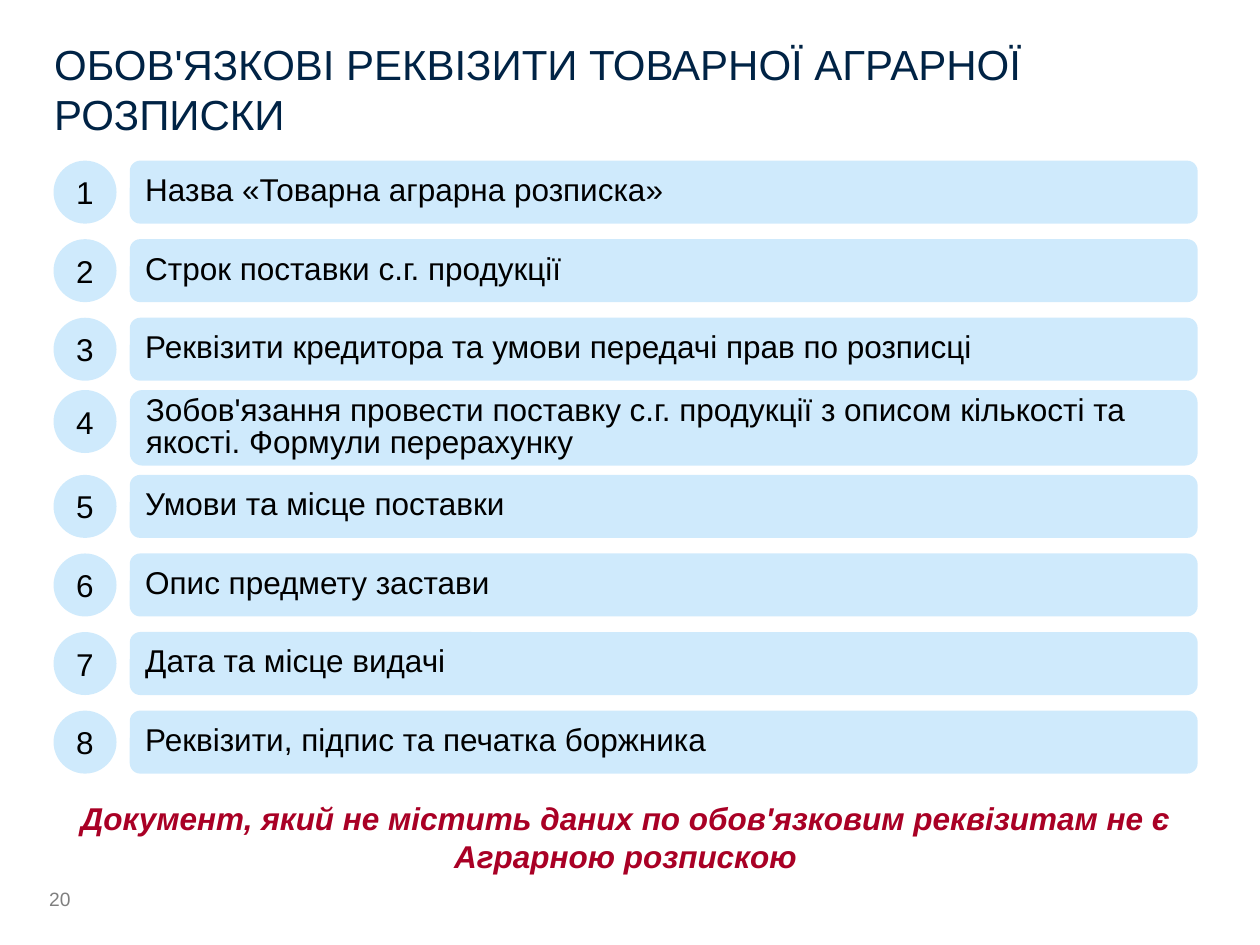
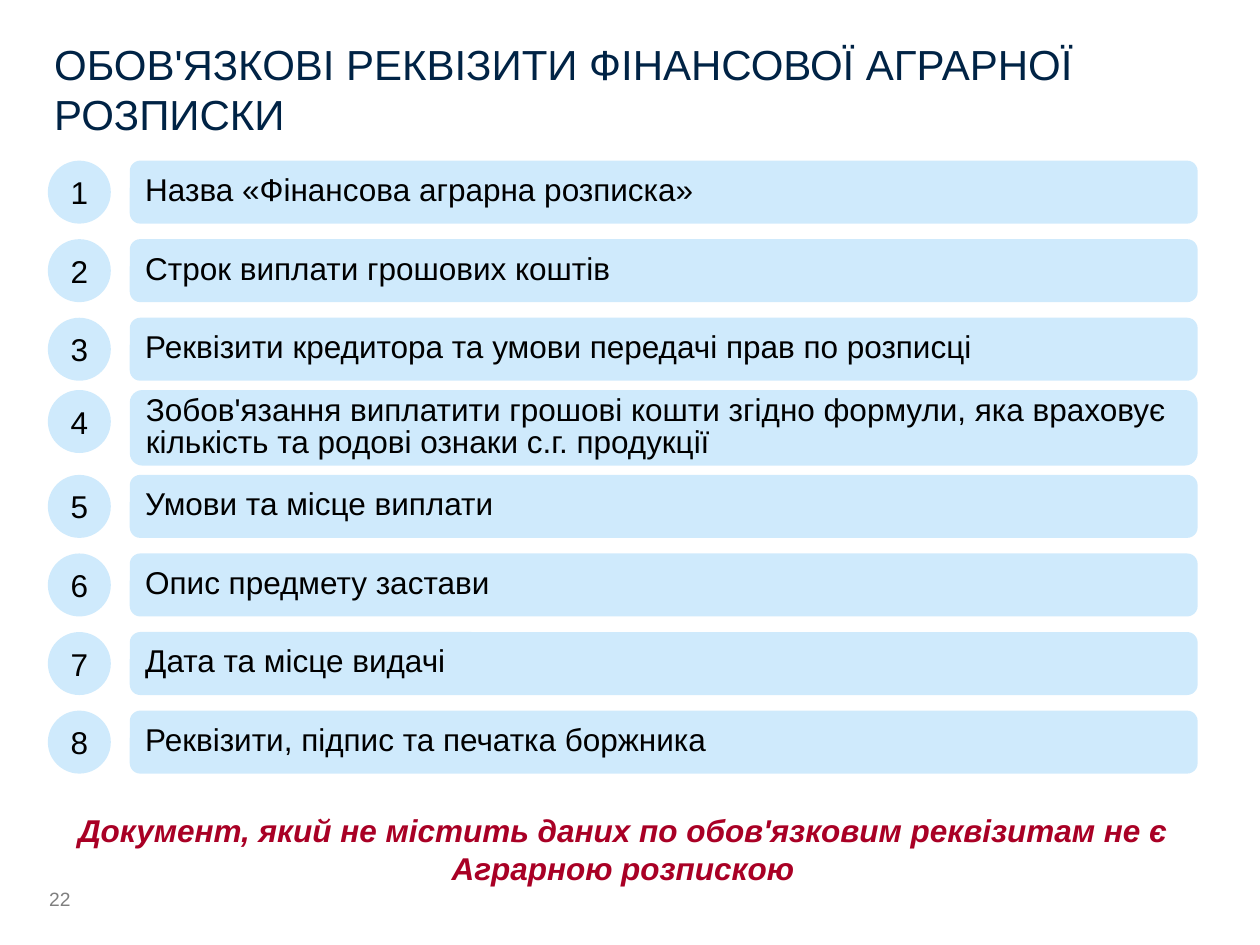
from collections import namedtuple
from dataclasses import dataclass

from pptx import Presentation
from pptx import util as u
from pptx.dml.color import RGBColor
from pptx.enum import shapes, text
from pptx.oxml.ns import qn
from lxml import etree

SLIDE_W, SLIDE_H = u.Inches(10), u.Inches(7.5)
COLUMN, ROW = SLIDE_W / 100, SLIDE_H / 75
TITLE_ONLY = 5

# Measured in columns and rows of the slide grid
Box = namedtuple("Box", "left top width height")


@dataclass(frozen=True)
class Theme:
    font: str = "Arial"
    title: str = "002345"
    accent: str = "139AF0"
    body: str = "000000"
    warning: str = "A90025"
    page: str = "7F7F7F"
    accent_opacity: int = 20
    title_size: int = 24
    body_size: int = 18
    page_size: int = 11


THEME = Theme()
ROW_HEIGHT, TALL_ROW_HEIGHT = 5, 6
DISC_WIDTH, BAR_WIDTH = 5, 84.75
CHARS_PER_LINE = 62


def on_grid(box):
    return [u.Emu(round(length * unit))
            for length, unit in zip(box, (COLUMN, ROW, COLUMN, ROW))]


def write(shape, wording, size, color, align=text.PP_ALIGN.LEFT,
          anchor=text.MSO_ANCHOR.MIDDLE, emphasis=False):
    frame = shape.text_frame
    frame.text = wording
    frame.word_wrap = True
    frame.auto_size = text.MSO_AUTO_SIZE.NONE
    frame.vertical_anchor = anchor
    paragraph = frame.paragraphs[0]
    paragraph.alignment = align
    font = paragraph.runs[0].font
    font.name, font.size = THEME.font, u.Pt(size)
    font.color.rgb = RGBColor.from_string(color)
    font.bold = font.italic = emphasis
    return paragraph


def add_tinted(slide, preset, box, wording, align):
    """Add a borderless, translucent accent shape and return its paragraph."""
    shape = slide.shapes.add_shape(preset, *on_grid(box))
    shape.shadow.inherit = False
    shape.line.fill.background()
    shape.fill.solid()
    shape.fill.fore_color.rgb = RGBColor.from_string(THEME.accent)
    tint = shape.fill._xPr.find(qn("a:solidFill"))[0]
    etree.SubElement(tint, qn("a:alpha"), val=str(THEME.accent_opacity * 1000))
    return write(shape, wording, THEME.body_size, THEME.body, align)


def add_title(slide, box, wording):
    title = slide.shapes.title
    title.left, title.top, title.width, title.height = on_grid(box)
    write(title, wording, THEME.title_size, THEME.title)


def add_requisites(slide, box, requisites):
    """Spread numbered bars evenly down the box; long wording gets a taller bar."""
    pitch = (box.height - ROW_HEIGHT) / (len(requisites) - 1)
    bar_left = box.left + box.width - BAR_WIDTH
    for index, requisite in enumerate(requisites):
        tall = len(requisite) > CHARS_PER_LINE
        height = TALL_ROW_HEIGHT if tall else ROW_HEIGHT
        top = box.top + index * pitch - (height - ROW_HEIGHT) / 2
        add_tinted(slide, shapes.MSO_SHAPE.OVAL,
                   Box(box.left, top, DISC_WIDTH, ROW_HEIGHT),
                   str(index + 1), text.PP_ALIGN.CENTER)
        bar = add_tinted(slide, shapes.MSO_SHAPE.ROUNDED_RECTANGLE,
                         Box(bar_left, top, BAR_WIDTH, height),
                         requisite, text.PP_ALIGN.LEFT)
        bar.line_spacing = u.Pt(THEME.body_size)


def add_warning(slide, box, wording):
    warning = slide.shapes.add_textbox(*on_grid(box))
    write(warning, wording, THEME.body_size, THEME.warning,
          text.PP_ALIGN.CENTER, text.MSO_ANCHOR.TOP, emphasis=True)


def add_page_number(slide, box, number):
    page = slide.shapes.add_textbox(*on_grid(box))
    write(page, str(number), THEME.page_size, THEME.page)
    frame = page.text_frame
    frame.margin_left = frame.margin_right = 0
    frame.margin_top = frame.margin_bottom = 0


def add_receipt_slide(deck, title, requisites, page, title_width, list_left,
                      warning_box):
    slide = deck.slides.add_slide(deck.slide_layouts[TITLE_ONLY])
    add_title(slide, Box(3.3, 2.5, title_width, 9.1), title)
    add_requisites(slide, Box(list_left, 12.75, 95.05 - list_left, 48.65),
                   requisites)
    add_warning(slide, warning_box,
                "Документ, який не містить даних по обов'язковим реквізитам "
                "не є Аграрною розпискою")
    add_page_number(slide, Box(3.9, 69.4, 6, 3.9), page)


def receipt_requisites(name, term, obligation, place):
    """Fill the requisites that differ between kinds of receipt into the list."""
    return [
        f"Назва «{name} аграрна розписка»",
        term,
        "Реквізити кредитора та умови передачі прав по розписці",
        obligation,
        f"Умови та місце {place}",
        "Опис предмету застави",
        "Дата та місце видачі",
        "Реквізити, підпис та печатка боржника",
    ]


def main():
    deck = Presentation()
    deck.slide_width, deck.slide_height = SLIDE_W, SLIDE_H
    add_receipt_slide(
        deck, "ОБОВ'ЯЗКОВІ РЕКВІЗИТИ ТОВАРНОЇ АГРАРНОЇ РОЗПИСКИ",
        receipt_requisites(
            "Товарна", "Строк поставки с.г. продукції",
            "Зобов'язання провести поставку с.г. продукції з описом кількості "
            "та якості. Формули перерахунку", "поставки"),
        page=20, title_width=92.8, list_left=4.25,
        warning_box=Box(4.2, 62.9, 90.9, 7.1))
    add_receipt_slide(
        deck, "ОБОВ'ЯЗКОВІ РЕКВІЗИТИ ФІНАНСОВОЇ АГРАРНОЇ РОЗПИСКИ",
        receipt_requisites(
            "Фінансова", "Строк виплати грошових коштів",
            "Зобов'язання виплатити грошові кошти згідно формули, яка враховує "
            "кількість та родові ознаки с.г. продукції", "виплати"),
        page=22, title_width=91.1, list_left=3.8,
        warning_box=Box(3.8, 63.9, 91.3, 7.1))
    deck.save("out.pptx")


if __name__ == "__main__":
    main()
